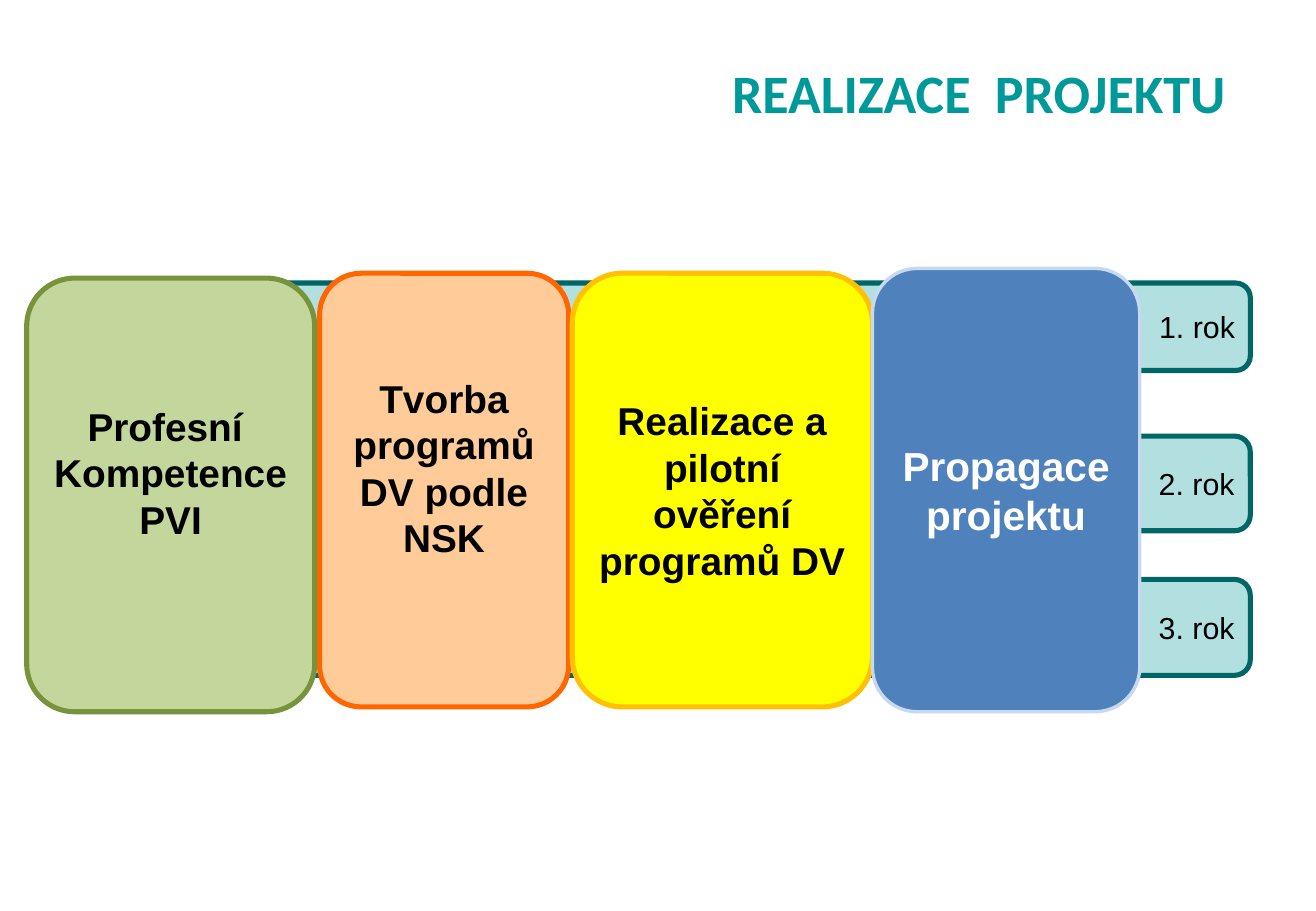
from dataclasses import dataclass
from lxml.etree import SubElement
from pptx import Presentation
from pptx.dml.color import RGBColor as Rgb
from pptx.enum.shapes import MSO_SHAPE as Kind
from pptx.enum.text import MSO_ANCHOR as Anchor, MSO_AUTO_SIZE as Fit, PP_ALIGN as Align
from pptx.oxml.ns import qn
from pptx.util import Inches, Pt


@dataclass(frozen=True)
class Theme:
    teal: str = "009999"
    edge: str = "006666"
    black: str = "000000"
    white: str = "FFFFFF"
    green: tuple = ("C3D69B", "77933C")
    peach: tuple = ("FFCC99", "FF6600")
    gold: tuple = ("FFFF00", "FFC000")
    blue: tuple = ("4F81BD", "C6D9F1")
    head: int = 32
    large: int = 24
    body: int = 23
    small: int = 18
    clear: int = 30
    font: str = "Arial"
    title: str = "Calibri"


class Deck:
    def __init__(self, theme, width, height):
        self.theme = theme
        self.show = Presentation()
        self.show.slide_width = Inches(width)
        self.show.slide_height = Inches(height)
        self.slide = self.show.slides.add_slide(self.show.slide_layouts[5])

    def place(self, shape, left, top, width, height):
        shape.left, shape.top = Inches(left), Inches(top)
        shape.width, shape.height = Inches(width), Inches(height)

    def label(self, frame, text, align, size, color, font, bold):
        frame.word_wrap = True
        frame.auto_size = Fit.NONE
        frame.text = text
        for para in frame.paragraphs:
            para.alignment = align
            for run in para.runs:
                run.font.name = font
                run.font.size = Pt(size)
                run.font.bold = bold
                run.font.color.rgb = Rgb.from_string(color)

    def title(self, text, *area):
        shape = self.slide.shapes.title
        self.place(shape, *area)
        shape.text_frame.vertical_anchor = Anchor.TOP
        self.label(shape.text_frame, text, Align.RIGHT, self.theme.head,
                   self.theme.teal, self.theme.title, True)

    def box(self, area, fill, edge, width, text, align, size, color, bold, base=0.05):
        shape = self.slide.shapes.add_shape(
            Kind.ROUNDED_RECTANGLE, *[Inches(part) for part in area])
        shape.shadow.inherit = False
        shape.fill.solid()
        shape.fill.fore_color.rgb = Rgb.from_string(fill)
        shape.line.color.rgb = Rgb.from_string(edge)
        shape.line.width = Pt(width)
        frame = shape.text_frame
        frame.margin_left = frame.margin_right = Inches(0.09)
        frame.margin_top, frame.margin_bottom = Inches(0.05), Inches(base)
        frame.vertical_anchor = Anchor.MIDDLE
        self.label(frame, text, align, size, color, self.theme.font, bold)
        return shape

    def year(self, text, top, height):
        look = self.theme
        shape = self.box((1.16, top, 9.13, height), look.teal, look.edge, 3,
                         text, Align.RIGHT, look.small, look.black, False)
        color = shape.element.spPr.find(qn("a:solidFill"))[0]
        SubElement(color, qn("a:alpha")).set("val", str(look.clear * 1000))

    def phase(self, text, area, pair, base=0.05):
        look = self.theme
        self.box(area, *pair, 3, text, Align.CENTER, look.body, look.black, True, base)

    def promo(self, text, area):
        look = self.theme
        self.box(area, *look.blue, 2, text, Align.CENTER, look.large, look.white, True)


def main():
    look = Theme()
    deck = Deck(look, 10.83, 7.5)
    deck.title("REALIZACE  PROJEKTU ", 0.54, 0.44, 9.75, 1.11)
    rows = ((2.33, 0.72), (3.59, 0.78), (4.77, 0.79))
    for count, (top, height) in enumerate(rows, 1):
        deck.year(f"{count}. rok", top, height)
    deck.phase("Tvorba programů DV podle NSK", (2.63, 2.25, 2.05, 3.57), look.peach, 0.42)
    deck.phase("Realizace a pilotní ověření programů DV", (4.71, 2.25, 2.47, 3.57), look.gold)
    deck.promo("Propagace projektu", (7.18, 2.21, 2.2, 3.65))
    deck.phase("Profesní \nKompetence\nPVI", (0.22, 2.29, 2.37, 3.57), look.green, 0.42)
    deck.show.save("out.pptx")


if __name__ == "__main__":
    main()
